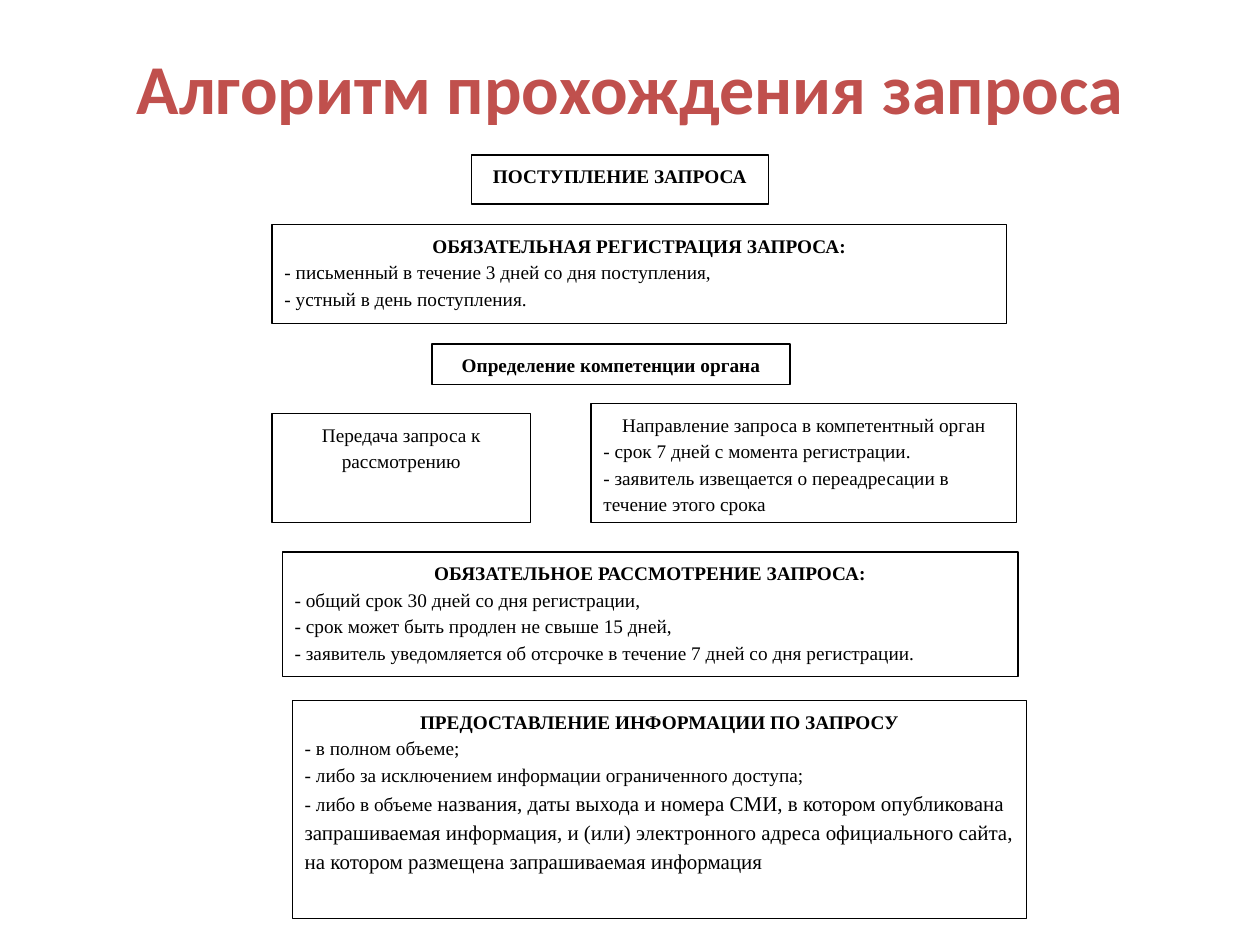
from pptx import Presentation
from pptx.dml.color import RGBColor
from pptx.enum.shapes import MSO_SHAPE as Shape
from pptx.enum.text import MSO_ANCHOR as Anchor, PP_ALIGN as Align
from pptx.util import Inches, Pt

TITLE = "Алгоритм прохождения запроса"
BODY_FONT = "Times New Roman"
BODY_SIZE, LARGE_SIZE = 11, 12
BULLET = "- "

STEPS = [
    {"at": (3.74, 1.23, 2.36, 0.39), "heading": "ПОСТУПЛЕНИЕ ЗАПРОСА", "bold": True},
    {"at": (2.16, 1.78, 5.83, 0.79), "heading": "ОБЯЗАТЕЛЬНАЯ РЕГИСТРАЦИЯ ЗАПРОСА:", "bold": True,
     "items": ["письменный в течение 3 дней со дня поступления,",
               "устный в день поступления."]},
    {"at": (3.43, 2.73, 2.84, 0.32), "heading": "Определение компетенции органа", "bold": True},
    {"at": (2.16, 3.28, 2.05, 0.87), "heading": "Передача запроса к рассмотрению", "bold": False},
    {"at": (4.69, 3.2, 3.38, 0.95), "heading": "Направление запроса в компетентный орган", "bold": False,
     "items": ["срок 7 дней с момента регистрации.",
               "заявитель извещается о переадресации в течение этого срока"]},
    {"at": (2.24, 4.38, 5.84, 0.99), "heading": "ОБЯЗАТЕЛЬНОЕ РАССМОТРЕНИЕ ЗАПРОСА:", "bold": True,
     "items": ["общий срок 30 дней со дня регистрации,",
               "срок может быть продлен не свыше 15 дней,",
               "заявитель уведомляется об отсрочке в течение 7 дней со дня регистрации."]},
    {"at": (2.32, 5.56, 5.83, 1.73), "heading": "ПРЕДОСТАВЛЕНИЕ ИНФОРМАЦИИ ПО ЗАПРОСУ", "bold": True,
     "items": ["в полном объеме;",
               "либо за исключением информации ограниченного доступа;",
               "либо в объеме "],
     "large_ending": "названия, даты выхода и номера СМИ, в котором опубликована запрашиваемая "
                     "информация, и (или) электронного адреса официального сайта, на котором "
                     "размещена запрашиваемая информация"},
]


def color(value):
    return RGBColor.from_string(value)


def format_run(run, font, size, fill, bold=False):
    run.font.name = font
    run.font.size = Pt(size)
    run.font.bold = bold
    run.font.color.rgb = color(fill)


def add_text(paragraph, text, size=BODY_SIZE, bold=False):
    run = paragraph.add_run()
    run.text = text
    format_run(run, BODY_FONT, size, "000000", bold)


def add_title(slide):
    box = slide.shapes.add_textbox(*map(Inches, (0.5, 0.3, 9, 0.77)))
    frame = box.text_frame
    frame.word_wrap = True
    frame.vertical_anchor = Anchor.MIDDLE
    frame.text = TITLE
    paragraph = frame.paragraphs[0]
    paragraph.alignment = Align.CENTER
    format_run(paragraph.runs[0], "Calibri", 40, "C0504D", True)


def add_step(slide, step):
    shape = slide.shapes.add_shape(Shape.RECTANGLE, *map(Inches, step["at"]))
    shape.shadow.inherit = False
    shape.fill.solid()
    shape.fill.fore_color.rgb = color("FFFFFF")
    shape.line.color.rgb = color("000000")
    shape.line.width = Pt(0.75)
    frame = shape.text_frame
    frame.word_wrap = True
    frame.vertical_anchor = Anchor.TOP
    heading = frame.paragraphs[0]
    heading.alignment = Align.CENTER
    add_text(heading, step["heading"], bold=step["bold"])
    for item in step.get("items", []):
        paragraph = frame.add_paragraph()
        paragraph.alignment = Align.LEFT
        add_text(paragraph, BULLET + item)
    if "large_ending" in step:
        add_text(frame.paragraphs[-1], step["large_ending"], LARGE_SIZE)
    for paragraph in frame.paragraphs:
        paragraph.line_spacing = 1.15


def main():
    presentation = Presentation()
    presentation.slide_width, presentation.slide_height = Inches(10), Inches(7.5)
    slide = presentation.slides.add_slide(presentation.slide_layouts[6])
    add_title(slide)
    for step in STEPS:
        add_step(slide, step)
    presentation.save("out.pptx")


if __name__ == "__main__":
    main()
